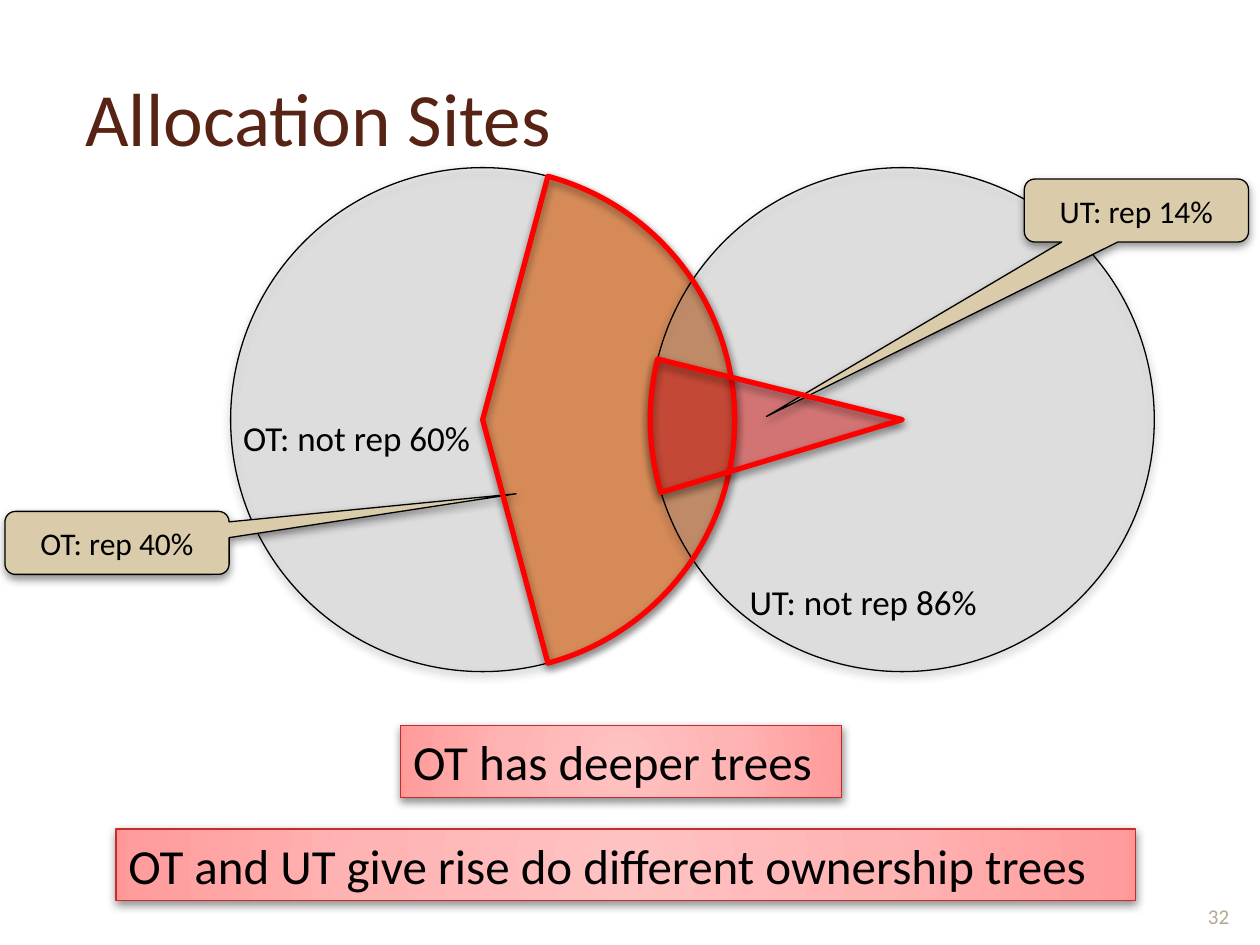
from lxml import etree
from pptx import Presentation
from pptx.dml.color import RGBColor
from pptx.enum.shapes import MSO_SHAPE
from pptx.enum.text import MSO_ANCHOR, MSO_AUTO_SIZE, PP_ALIGN
from pptx.oxml.ns import qn
from pptx.util import Cm, Pt

ELLIPSE, PIE, RECTANGLE = MSO_SHAPE.OVAL, MSO_SHAPE.PIE, MSO_SHAPE.RECTANGLE
CALLOUT = MSO_SHAPE.ROUNDED_RECTANGULAR_CALLOUT
LEFT, CENTER = PP_ALIGN.LEFT, PP_ALIGN.CENTER
TOP, MIDDLE, BOTTOM = MSO_ANCHOR.TOP, MSO_ANCHOR.MIDDLE, MSO_ANCHOR.BOTTOM
FIT_SHAPE = MSO_AUTO_SIZE.SHAPE_TO_FIT_TEXT

FONT = "Calibri"
BLACK, RED = "000000", "FF0000"
DIAMETER = 10.16
OT_BOX = (4.65, 3.38, DIAMETER, DIAMETER)
UT_BOX = (13.11, 3.38, DIAMETER, DIAMETER)
OT_ANGLES, UT_ANGLES = (105, 255), (163.2, 193.9)
BANNER_STOPS = ((0, "FFC2C2"), (50, "FFB4B4"), (97, "FF9C9C"), (100, "FF9595"))


def color(hex_value):
    """Return the colour for a hex string."""
    return RGBColor.from_string(hex_value)


def lengths(box):
    """Return a box in centimetres as slide lengths."""
    return [Cm(value) for value in box]


def add_child(parent, tag, **attributes):
    """Append a drawing element with the given attributes."""
    values = {name: str(value) for name, value in attributes.items()}
    return etree.SubElement(parent, qn(tag), values)


def add_shadow(shape):
    """Give a shape a soft shadow that falls straight down."""
    shape.shadow.inherit = False
    effects = shape._element.spPr.find(qn("a:effectLst"))
    shadow = add_child(effects, "a:outerShdw", blurRad=Pt(5), dist=Pt(2),
                       dir=5400000, algn="ctr", rotWithShape=0)
    shade = add_child(shadow, "a:srgbClr", val=BLACK)
    add_child(shade, "a:alpha", val=43000)


def fill_solid(shape, hex_value, opacity=100):
    """Fill a shape with one colour at an opacity in percent."""
    shape.fill.solid()
    shape.fill.fore_color.rgb = color(hex_value)
    if opacity < 100:
        shade = shape._element.spPr.find(qn("a:solidFill")).find(qn("a:srgbClr"))
        add_child(shade, "a:alpha", val=opacity * 1000)


def fill_radial(shape, stops):
    """Fill a shape with a gradient that spreads from its centre."""
    shape.fill.solid()
    properties = shape._element.spPr
    gradient = etree.Element(qn("a:gradFill"), {"rotWithShape": "1"})
    stop_list = add_child(gradient, "a:gsLst")
    for position, hex_value in stops:
        stop = add_child(stop_list, "a:gs", pos=position * 1000)
        add_child(stop, "a:srgbClr", val=hex_value)
    path = add_child(gradient, "a:path", path="circle")
    add_child(path, "a:fillToRect", l=50000, t=50000, r=50000, b=50000)
    properties.replace(properties.find(qn("a:solidFill")), gradient)


def add_outlined(shapes, kind, box, line=BLACK, width=0.75, adjustments=()):
    """Add a shadowed shape with an outline."""
    shape = shapes.add_shape(kind, *lengths(box))
    for index, value in enumerate(adjustments):
        shape.adjustments[index] = value
    shape.line.color.rgb = color(line)
    shape.line.width = Pt(width)
    add_shadow(shape)
    return shape


def write_text(shape, text, size, hex_value=BLACK, align=LEFT, anchor=TOP):
    """Write one formatted run into a shape."""
    frame = shape.text_frame
    frame.vertical_anchor = anchor
    paragraph = frame.paragraphs[0]
    paragraph.alignment = align
    run = paragraph.add_run()
    run.text = text
    run.font.name = FONT
    run.font.size = Pt(size)
    run.font.color.rgb = color(hex_value)


def fit_to_text(shape):
    """Let a shape grow with its unwrapped text."""
    shape.text_frame.word_wrap = False
    shape.text_frame.auto_size = FIT_SHAPE


def add_title(slide, box, text):
    """Move and fill the title placeholder."""
    title = slide.shapes.title
    title.left, title.top, title.width, title.height = lengths(box)
    write_text(title, text, 43, "572314", anchor=MIDDLE)


def add_sector(shapes, box, angles, rotation, line, width):
    """Add a pie sector between two angles in degrees."""
    sector = add_outlined(shapes, PIE, box, line, width,
                          [angle * 0.6 for angle in angles])
    sector.rotation = rotation
    return sector


def add_circle(slide, box, angles, rotation, sector_fill, opacity):
    """Add a translucent circle grouped with its coloured sector."""
    group = slide.shapes.add_group_shape()
    fill_solid(add_outlined(group.shapes, ELLIPSE, box), "BFBFBF", 22)
    sector = add_sector(group.shapes, box, angles, rotation, "3891A7", 0.75)
    fill_solid(sector, sector_fill, opacity)


def add_sector_outline(slide, box, angles, rotation):
    """Trace a sector with a heavy red line."""
    add_sector(slide.shapes, box, angles, rotation, RED, 3).fill.background()


def add_callout(slide, box, text, tip):
    """Add a callout whose tip is relative to its centre and size."""
    callout = add_outlined(slide.shapes, CALLOUT, box, adjustments=(*tip, 0.167))
    fill_solid(callout, "DACCAB")
    write_text(callout, text, 18, align=CENTER, anchor=MIDDLE)


def add_label(slide, box, text):
    """Add a plain label for a share."""
    label = slide.shapes.add_textbox(*lengths(box))
    write_text(label, text, 20)
    fit_to_text(label)


def add_banner(slide, box, text):
    """Add a gradient banner with a conclusion."""
    banner = add_outlined(slide.shapes, RECTANGLE, box, "C32D2E")
    fill_radial(banner, BANNER_STOPS)
    write_text(banner, text, 28)
    fit_to_text(banner)


def add_slide_number(slide, box, text):
    """Add the slide number."""
    number = slide.shapes.add_textbox(*lengths(box))
    number.text_frame.word_wrap = True
    write_text(number, text, 12, "B6A98A", CENTER, BOTTOM)


def main():
    """Build and save the slide."""
    presentation = Presentation()
    presentation.slide_width, presentation.slide_height = Cm(25.4), Cm(19.05)
    slide = presentation.slides.add_slide(presentation.slide_layouts[5])
    add_title(slide, (1.47, 0.76, 22.53, 3.18), "Allocation Sites")
    add_circle(slide, OT_BOX, OT_ANGLES, 180, "FF6600", 49)
    add_circle(slide, UT_BOX, UT_ANGLES, 0, RED, 37)
    add_callout(slide, (0.1, 10.31, 4.52, 1.27), "OT: rep 40%", (1.78, -0.78))
    add_label(slide, (4.65, 8.28, 5.28, 1.12), "OT: not rep 60%")
    add_label(slide, (14.86, 11.58, 5.26, 1.12), "UT: not rep 86%")
    add_callout(slide, (20.65, 3.61, 4.52, 1.27), "UT: rep 14%", (-1.65, 3.27))
    add_banner(slide, (8.08, 14.63, 8.89, 1.45), "OT has deeper trees")
    add_sector_outline(slide, OT_BOX, OT_ANGLES, 180)
    add_sector_outline(slide, UT_BOX, UT_ANGLES, 0)
    add_slide_number(slide, (23.93, 17.53, 1.27, 1.32), "32")
    add_banner(slide, (2.34, 16.71, 20.55, 1.45),
               "OT and UT give rise do different ownership trees")
    presentation.save("out.pptx")


if __name__ == "__main__":
    main()
